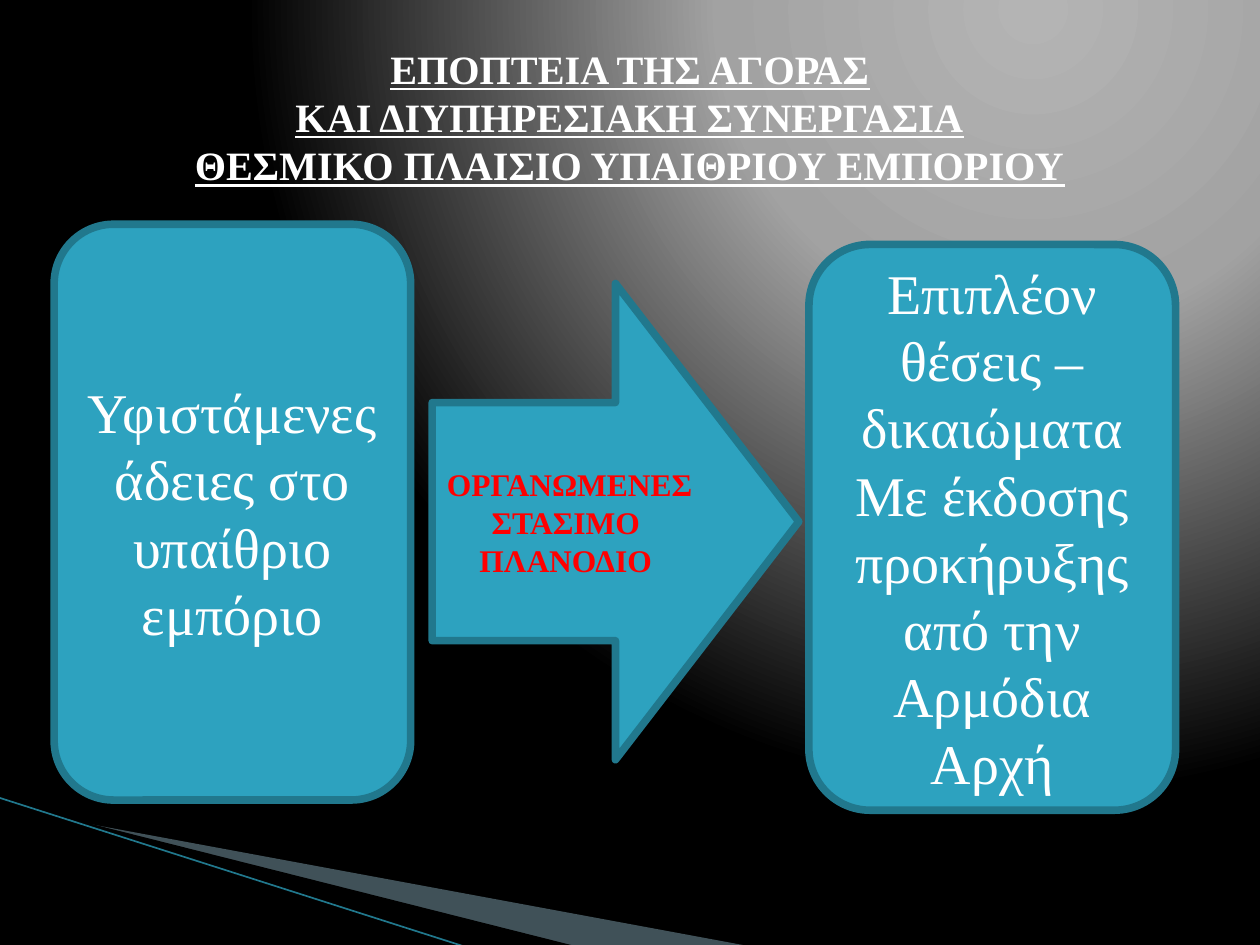
from lxml.etree import SubElement
from pptx import Presentation
from pptx.dml.color import RGBColor
from pptx.enum.shapes import MSO_CONNECTOR, MSO_SHAPE
from pptx.enum.text import MSO_ANCHOR, PP_ALIGN
from pptx.oxml import parse_xml
from pptx.oxml.ns import nsdecls, qn
from pptx.util import Inches, Pt

THEME = {
    "font": "Times New Roman",
    "white": "FFFFFF", "red": "FF0000", "black": "000000",
    "teal": "2DA2BF", "edge": "21788D", "wedge": "A0CBDC",
    "glow": [(0, "B4B4B4"), (40, "A2A2A2"), (100, "000000")],
    "title": 23, "body": 32, "label": 18, "border": 4.33, "hairline": 0.95,
}


def rgb(name):
    return RGBColor.from_string(THEME[name])


def add_run(p, text, size, color, bold=False, underline=None):
    r = p.add_run()
    r.text = text
    r.font.name = THEME["font"]
    r.font.size = Pt(THEME[size])
    r.font.color.rgb = rgb(color)
    r.font.bold = bold
    r.font.underline = underline


prs = Presentation()
prs.slide_width, prs.slide_height = Inches(10), Inches(7.5)
W, H = prs.slide_width, prs.slide_height
s = prs.slides.add_slide(prs.slide_layouts[5])

s.background.fill.gradient()
grad = s.element.find(".//" + qn("a:gradFill"))
stops = "".join(
    f'<a:gs pos="{pos * 1000}"><a:srgbClr val="{color}"/></a:gs>'
    for pos, color in THEME["glow"]
)
grad.getparent().replace(grad, parse_xml(
    f'<a:gradFill {nsdecls("a")} rotWithShape="1"><a:gsLst>{stops}</a:gsLst>'
    '<a:path path="circle"><a:fillToRect l="65000" t="0" r="0" b="98000"/></a:path>'
    '</a:gradFill>'
))

wedges = [
    ("wedge", 40, [(0.55, 6.51), (5.95, 7.51), (4.56, 7.51), (0.55, 6.5)]),
    ("black", 100, [(0.53, 6.49), (4.57, 7.51), (3.72, 7.52), (0.54, 6.5)]),
]
for color, opacity, points in wedges:
    points = [(Inches(x), Inches(y)) for x, y in points]
    fb = s.shapes.build_freeform(*points[0])
    fb.add_line_segments(points[1:], close=True)
    sp = fb.convert_to_shape()
    sp.shadow.inherit = False
    sp.fill.solid()
    sp.fill.fore_color.rgb = rgb(color)
    sp.line.fill.background()
    clr = sp.fill._xPr.find(".//" + qn("a:srgbClr"))
    SubElement(clr, qn("a:alpha")).set("val", str(opacity * 1000))

line = s.shapes.add_connector(
    MSO_CONNECTOR.STRAIGHT, Inches(-0.01), Inches(6.33), Inches(3.71), Inches(7.52))
line.line.color.rgb = rgb("edge")
line.line.width = Pt(THEME["hairline"])
SubElement(line._element.spPr, qn("a:effectLst"))

title = s.shapes.title
title.left, title.top = int(W * 0.05), int(H * 0.04)
title.width, title.height = int(W * 0.9), Inches(1.25)
tf = title.text_frame
tf.vertical_anchor = MSO_ANCHOR.MIDDLE
p = tf.paragraphs[0]
p.alignment = PP_ALIGN.CENTER
for i, text in enumerate([
    "ΕΠΟΠΤΕΙΑ ΤΗΣ ΑΓΟΡΑΣ",
    "ΚΑΙ ΔΙΥΠΗΡΕΣΙΑΚΗ ΣΥΝΕΡΓΑΣΙΑ",
    "ΘΕΣΜΙΚΟ ΠΛΑΙΣΙΟ ΥΠΑΙΘΡΙΟΥ ΕΜΠΟΡΙΟΥ",
]):
    if i:
        p.add_line_break()
    add_run(p, text, "title", "white", True, True)

steps = [
    (MSO_SHAPE.ROUNDED_RECTANGLE, (0.43, 1.78, 2.83, 4.57), "body", "white", False,
     ["Υφιστάμενες άδειες στο υπαίθριο εμπόριο"]),
    (MSO_SHAPE.RIGHT_ARROW, (3.43, 2.25, 2.91, 3.78), "label", "red", True,
     ["ΟΡΓΑΝΩΜΕΝΕΣ", "ΣΤΑΣΙΜΟ ", "ΠΛΑΝΟΔΙΟ "]),
    (MSO_SHAPE.ROUNDED_RECTANGLE, (6.42, 1.94, 2.91, 4.49), "body", "white", False,
     ["Επιπλέον θέσεις – δικαιώματα", "Με έκδοσης προκήρυξης από την Αρμόδια Αρχή"]),
]
for kind, box, size, color, bold, texts in steps:
    sp = s.shapes.add_shape(kind, *(Inches(v) for v in box))
    sp.shadow.inherit = False
    sp.fill.solid()
    sp.fill.fore_color.rgb = rgb("teal")
    sp.line.color.rgb = rgb("edge")
    sp.line.width = Pt(THEME["border"])
    tf = sp.text_frame
    tf.word_wrap = True
    tf.vertical_anchor = MSO_ANCHOR.MIDDLE
    for i, text in enumerate(texts):
        p = tf.add_paragraph() if i else tf.paragraphs[0]
        p.alignment = PP_ALIGN.CENTER
        add_run(p, text, size, color, bold)

prs.save("out.pptx")
